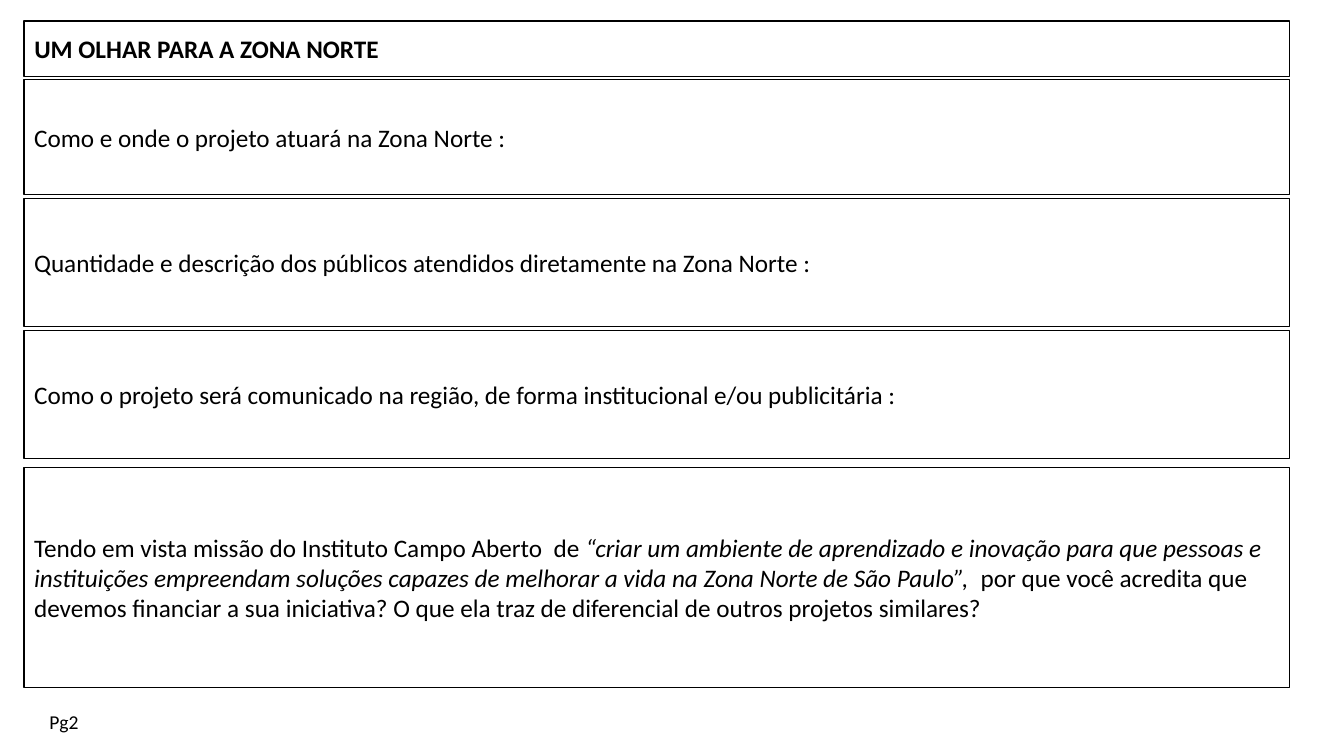
import pptx
import pptx.dml.color
import pptx.enum.shapes
import pptx.enum.text
import pptx.util

BLACK = pptx.dml.color.RGBColor(0x00, 0x00, 0x00)

# Shares of the slide's size, in percent
LEFT, WIDTH = 1.8, 94.15
QUESTIONS = [  # top, height, runs as (text, italic)
    (10.53, 15.2, [("Como e onde o projeto atuará na Zona Norte :", False)]),
    (26.27, 16.93, [("Quantidade e descrição dos públicos atendidos diretamente "
                     "na Zona Norte :", False)]),
    (43.73, 16.93, [("Como o projeto será comunicado na região, de forma "
                     "institucional e/ou publicitária :", False)]),
    (61.87, 29.07, [
        ("Tendo em vista missão do Instituto Campo Aberto  de ", False),
        ("“criar um ambiente de aprendizado e inovação para que pessoas e "
         "instituições empreendam soluções capazes de melhorar a vida na "
         "Zona Norte de São Paulo”,", True),
        ("  por que você acredita que devemos financiar a sua iniciativa? "
         "O que ela traz de diferencial de outros projetos similares?", False),
    ]),
]


class FormPage:
    """Holds the form's style and the current slide."""

    font = "Calibri"
    text_size = 18
    label_size = 14
    line_width = pptx.util.Pt(1)

    def __init__(self, deck):
        self.deck = deck
        self.slide = deck.slides.add_slide(deck.slide_layouts[5])

    def area(self, left, top, width, height):
        across, down = self.deck.slide_width / 100, self.deck.slide_height / 100
        return (round(left * across), round(top * down),
                round(width * across), round(height * down))

    def add_spans(self, box, runs, size, bold=False):
        para = box.text_frame.paragraphs[0]
        para.alignment = pptx.enum.text.PP_ALIGN.LEFT
        for text, italic in runs:
            span = para.add_run()
            span.text = text
            span.font.name = self.font
            span.font.size = pptx.util.Pt(size)
            span.font.bold = bold
            span.font.italic = italic
            span.font.color.rgb = BLACK

    def frame(self, box):
        box.fill.background()
        box.line.color.rgb = BLACK
        box.line.width = self.line_width
        box.text_frame.word_wrap = True
        box.text_frame.auto_size = pptx.enum.text.MSO_AUTO_SIZE.NONE
        box.text_frame.vertical_anchor = pptx.enum.text.MSO_ANCHOR.MIDDLE

    def title(self, top, height, text):
        box = self.slide.shapes.title
        box.left, box.top, box.width, box.height = self.area(LEFT, top, WIDTH, height)
        self.frame(box)
        self.add_spans(box, [(text, False)], self.text_size, bold=True)

    def question(self, top, height, runs):
        box = self.slide.shapes.add_shape(
            pptx.enum.shapes.MSO_SHAPE.RECTANGLE, *self.area(LEFT, top, WIDTH, height))
        box.shadow.inherit = False
        self.frame(box)
        self.add_spans(box, runs, self.text_size)

    def page_label(self, left, top, width, height, text):
        box = self.slide.shapes.add_textbox(*self.area(left, top, width, height))
        box.text_frame.word_wrap = False
        box.text_frame.auto_size = pptx.enum.text.MSO_AUTO_SIZE.SHAPE_TO_FIT_TEXT
        self.add_spans(box, [(text, False)], self.label_size)


def main():
    deck = pptx.Presentation()
    deck.slide_width = pptx.util.Inches(13.33)
    deck.slide_height = pptx.util.Inches(7.5)
    page = FormPage(deck)

    # Heading
    page.title(2.8, 7.33, "UM OLHAR PARA A ZONA NORTE")

    # Question boxes
    for top, height, runs in QUESTIONS:
        page.question(top, height, runs)

    # Page number
    page.page_label(2.93, 93.2, 3.75, 4.53, "Pg2")

    deck.save("out.pptx")


if __name__ == "__main__":
    main()
